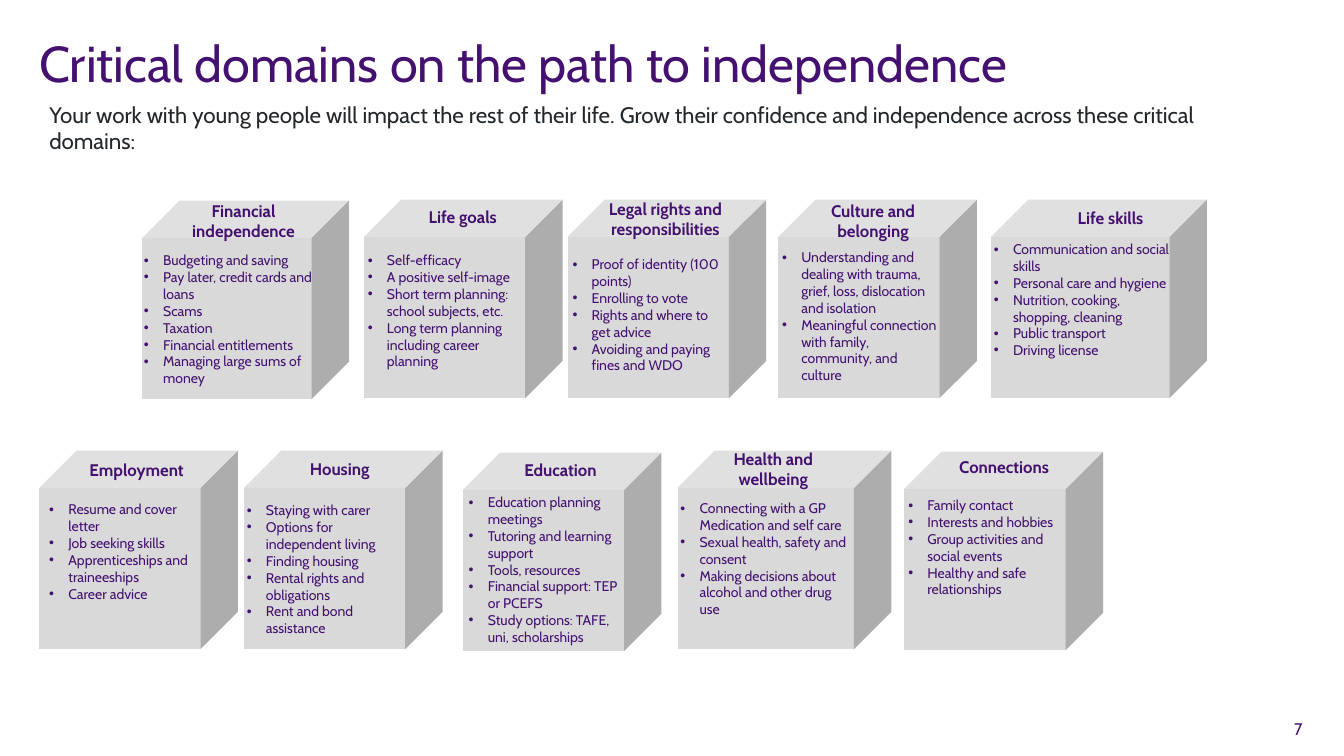
import pptx
import pptx.dml.color
import pptx.enum.shapes
import pptx.enum.text
import pptx.util
from lxml import etree

PURPLE = pptx.dml.color.RGBColor(0x44, 0x11, 0x70)
CHARCOAL = pptx.dml.color.RGBColor(0x22, 0x27, 0x2B)
GREY = pptx.dml.color.RGBColor(0xD9, 0xD9, 0xD9)
FONT = "Cabin"

TITLE = "Critical domains on the path to independence"
INTRO = ("Your work with young people will impact the rest of their life. Grow their "
         "confidence and independence across these critical domains:")
PAGE = "7"

# All lengths are counted in cells of a 1333 x 750 grid over the slide.
COLUMNS, ROWS = 1333, 750
MARGIN = 39
CUBE_SIDE = 197
CUBE_DEPTH = 0.188
TEXT_INSET = 10
HEADING_LINE, BULLET_LINE = 20, 16.9
INDENT = 19

# Each domain: heading, its line count, cube (left, top, width),
# heading and list offsets from the cube (left, top, width), list line count, points.
DOMAINS = [
    ("Financial independence", 2, (141, 199, 205), (28, -5, 145), (-8, 46, 190), 9,
     ["Budgeting and saving", "Pay later, credit cards and loans", "Scams", "Taxation",
      "Financial entitlements", "Managing large sums of money"]),
    ("Life goals", 1, (361, 198, 197), (27, 2, 142), (-6, 47, 183), 8,
     ["Self-efficacy", "A positive self-image",
      "Short term planning: school subjects, etc.",
      "Long term planning including career planning"]),
    ("Legal rights and responsibilities", 2, (563, 198, 197), (22, -6, 150),
     (-5, 51, 172), 7,
     ["Proof of identity (100 points)", "Enrolling to vote",
      "Rights and where to get advice", "Avoiding and paying fines and WDO"]),
    ("Culture and belonging", 2, (772, 198, 197), (19, -4, 150), (-6, 44, 174), 9,
     ["Understanding and dealing with trauma, grief, loss, dislocation and isolation",
      "Meaningful connection with family, community, and culture"]),
    ("Life skills", 1, (983, 198, 214), (28, 3, 181), (-7, 36, 196), 8,
     ["Communication and social skills", "Personal care and hygiene",
      "Nutrition, cooking, shopping, cleaning", "Public transport", "Driving license"]),
    ("Employment", 1, (39, 447, 197), (27, 4, 139), (0, 45, 164), 6,
     ["Resume and cover letter", "Job seeking skills",
      "Apprenticeships and traineeships", "Career advice"]),
    ("Housing", 1, (242, 447, 197), (24, 3, 142), (-7, 46, 174), 9,
     ["Staying with carer", "Options for independent living", "Finding housing",
      "Rental rights and obligations", "Rent and bond assistance"]),
    ("Education", 1, (459, 449, 197), (22, 2, 150), (-4, 36, 172), 9,
     ["Education planning meetings", "Tutoring and learning support",
      "Tools, resources", "Financial support: TEP or PCEFS",
      "Study options: TAFE, uni, scholarships"]),
    ("Health and wellbeing", 2, (672, 447, 212), (14, -7, 162), (-7, 44, 192), 8,
     ["Connecting with a GP Medication and self care",
      "Sexual health, safety and consent",
      "Making decisions about alcohol and other drug use"]),
    ("Connections", 1, (897, 448, 197), (24, 0, 150), (-6, 40, 172), 7,
     ["Family contact", "Interests and hobbies", "Group activities and social events",
      "Healthy and safe relationships"]),
]


def cells(*counts):
    return [pptx.util.Inches(count / 100) for count in counts]


def add_bullet(paragraph):
    indent = cells(INDENT)[0]
    properties = paragraph._p.get_or_add_pPr()
    properties.set("marL", str(indent))
    properties.set("indent", str(-indent))
    namespace = properties.nsmap["a"]
    bullet_font = etree.SubElement(properties, f"{{{namespace}}}buFont")
    bullet_font.set("typeface", "Arial")
    etree.SubElement(properties, f"{{{namespace}}}buChar").set("char", "•")


def add_text(parent, box, paragraphs, size, color=PURPLE, bold=False, align="LEFT",
             bullets=False, inset=True, line_spacing=None):
    """Place paragraphs in a box; an inset box grows with its text."""
    frame = parent.shapes.add_textbox(*cells(*box)).text_frame
    frame.word_wrap = True
    frame.vertical_anchor = pptx.enum.text.MSO_ANCHOR.TOP
    if inset:
        frame.auto_size = pptx.enum.text.MSO_AUTO_SIZE.SHAPE_TO_FIT_TEXT
    else:
        frame.margin_left = frame.margin_right = 0
        frame.margin_top = frame.margin_bottom = 0
    for index, words in enumerate(paragraphs):
        paragraph = frame.add_paragraph() if index else frame.paragraphs[0]
        paragraph.alignment = getattr(pptx.enum.text.PP_ALIGN, align)
        if line_spacing:
            paragraph.line_spacing = line_spacing
        if bullets:
            add_bullet(paragraph)
        run = paragraph.add_run()
        run.text = words
        run.font.name = FONT
        run.font.size = pptx.util.Pt(size)
        run.font.bold = bold
        run.font.color.rgb = color


def add_domain(slide, heading, heading_lines, cube_place, heading_offset,
               list_offset, list_lines, points):
    left, top, width = cube_place
    domain = slide.shapes.add_group_shape()
    cube = domain.shapes.add_shape(pptx.enum.shapes.MSO_SHAPE.CUBE,
                                   *cells(left, top, width, CUBE_SIDE))
    cube.adjustments[0] = CUBE_DEPTH
    cube.shadow.inherit = False
    cube.fill.solid()
    cube.fill.fore_color.rgb = GREY
    cube.line.fill.background()

    def box(offset, lines, line_height):
        across, down, box_width = offset
        return left + across, top + down, box_width, TEXT_INSET + lines * line_height

    add_text(domain, box(heading_offset, heading_lines, HEADING_LINE), [heading], 12,
             bold=True, align="CENTER")
    add_text(domain, box(list_offset, list_lines, BULLET_LINE), points, 10, bullets=True)


def main():
    deck = pptx.Presentation()
    deck.slide_width, deck.slide_height = cells(COLUMNS, ROWS)
    slide = deck.slides.add_slide(deck.slide_layouts[6])
    add_text(slide, (MARGIN, MARGIN, 1063, 110), [TITLE], 36, inset=False,
             line_spacing=0.9)
    add_text(slide, (1238, 713, 54, 20), [PAGE], 12, align="RIGHT", inset=False)
    add_text(slide, (MARGIN, 95, 1158, 64), [INTRO], 16, color=CHARCOAL)
    for domain in DOMAINS:
        add_domain(slide, *domain)
    deck.save("out.pptx")


if __name__ == "__main__":
    main()
